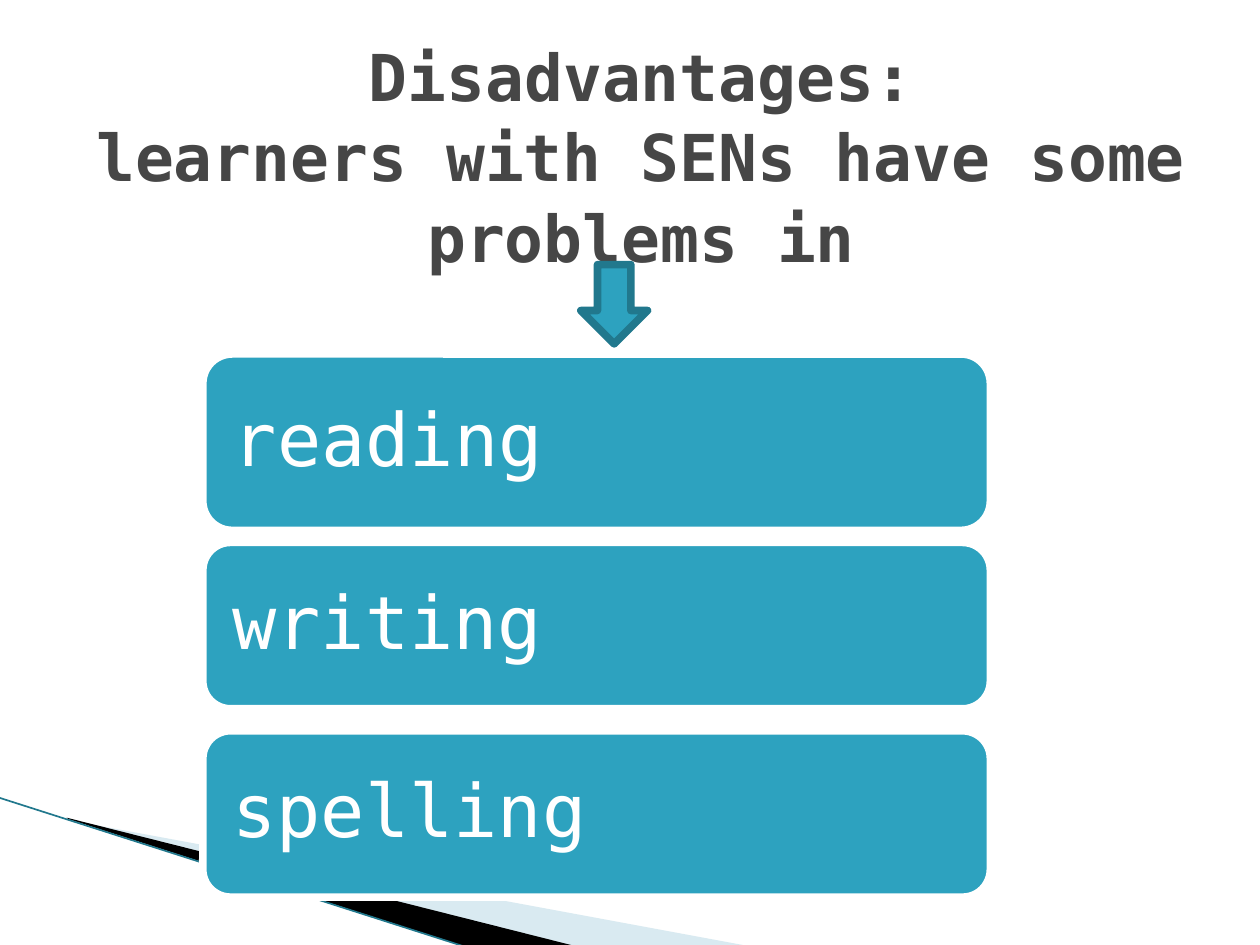
from pptx import Presentation
from pptx.util import Inches, Pt
from pptx.dml.color import RGBColor as Rgb
from pptx.enum.shapes import MSO_SHAPE as Kind, MSO_CONNECTOR as Link
from pptx.enum.text import PP_ALIGN as Align, MSO_ANCHOR as Anchor, MSO_AUTO_SIZE as Fit
from pptx.oxml.ns import qn
from lxml.etree import SubElement as add_sub

HUES = {k: Rgb.from_string(v) for k, v in {
    "teal": "2DA2BF", "deep": "21788D", "pale": "A0CBDC",
    "ink": "464646", "black": "000000", "white": "FFFFFF"}.items()}
FACE = "DejaVu Sans Mono"
TITLE = dict(name=FACE, size=Pt(36.9), bold=True)
LABEL = dict(name=FACE, size=Pt(42), bold=False)


def paint(shape, fill, edge=None):
    shape.shadow.inherit = False
    shape.fill.solid()
    shape.fill.fore_color.rgb = HUES[fill]
    if edge:
        shape.line.color.rgb = HUES[edge]
        shape.line.width = Pt(4.33)
    else:
        shape.line.fill.background()


def style(para, look, hue):
    for key, value in look.items():
        setattr(para.font, key, value)
    para.font.color.rgb = HUES[hue]


deck = Presentation()
deck.slide_width, deck.slide_height = Inches(10), Inches(7.5)
slide = deck.slides.add_slide(deck.slide_layouts[5])
shapes = slide.shapes

# Corner wedges, in hundredths of an inch
wedges = [
    ("pale", 40, [(55, 651), (595, 751), (456, 751), (55, 650)]),
    ("black", 100, [(53, 649), (457, 751), (372, 752), (54, 650)]),
]
for hue, share, points in wedges:
    pen = shapes.build_freeform(*points[0], scale=Inches(0.01))
    pen.add_line_segments(points[1:], close=True)
    wedge = pen.convert_to_shape()
    paint(wedge, hue)
    if share < 100:
        color = wedge.fill._xPr.find(qn("a:solidFill"))[0]
        add_sub(color, qn("a:alpha"), val=str(share * 1000))

# Thin corner line
rule = shapes.add_connector(
    Link.STRAIGHT, Inches(-0.01), Inches(6.33), Inches(3.71), Inches(7.52))
rule.line.color.rgb = HUES["deep"]
rule.line.width = Pt(0.95)
add_sub(rule._element.spPr, qn("a:effectLst"))

# Title
title = shapes.title
title.left, title.top, title.width, title.height = map(Inches, (0.59, 0.29, 9, 1.87))
frame = title.text_frame
frame.word_wrap, frame.auto_size = True, Fit.NONE
frame.vertical_anchor = Anchor.MIDDLE
frame.text = "Disadvantages:\vlearners with SENs have some problems in"
head = frame.paragraphs[0]
head.alignment, head.line_spacing = Align.CENTER, 1.04
style(head, TITLE, "ink")

# Problem boxes, evenly stepped
left, top, wide, step = 1.61, 2.81, 6.25, 1.495
for row, (word, high) in enumerate(
        [("reading", 1.4), ("writing", 1.32), ("spelling", 1.32)]):
    box = shapes.add_shape(Kind.ROUNDED_RECTANGLE, Inches(left),
                           Inches(top + row * step), Inches(wide), Inches(high))
    paint(box, "teal", "white")
    frame = box.text_frame
    frame.word_wrap, frame.vertical_anchor = True, Anchor.MIDDLE
    for side in ("left", "right", "top", "bottom"):
        setattr(frame, f"margin_{side}", Inches(0.17))
    frame.text = word
    para = frame.paragraphs[0]
    para.alignment, para.line_spacing = Align.LEFT, 0.9
    style(para, LABEL, "white")

# Arrow from the title to the boxes
arrow = shapes.add_shape(Kind.DOWN_ARROW, *map(Inches, (4.61, 2.1, 0.53, 0.63)))
paint(arrow, "teal", "deep")

deck.save("out.pptx")
